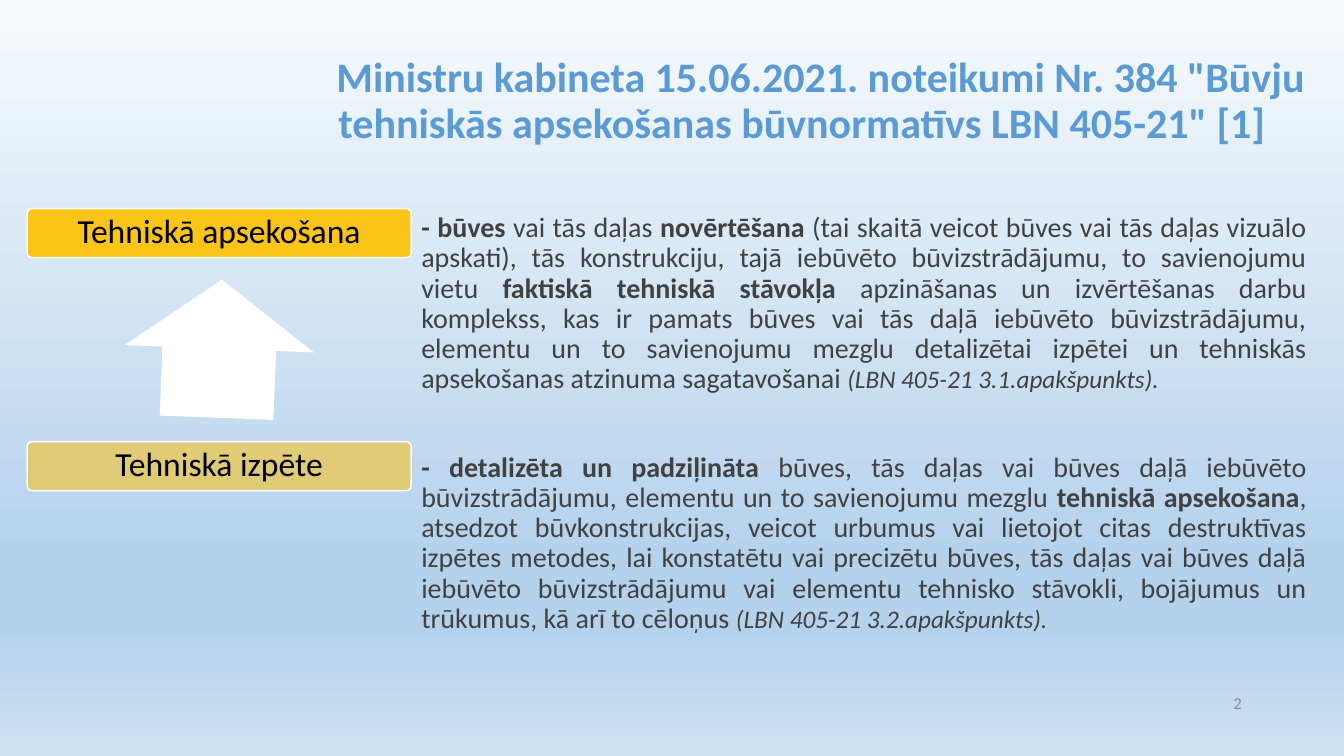
from dataclasses import dataclass

import pptx
import pptx.dml.color
import pptx.enum.shapes
import pptx.enum.text
import pptx.oxml
import pptx.oxml.ns
import pptx.util
from lxml import etree

Pt = pptx.util.Pt
RGB = pptx.dml.color.RGBColor
Align = pptx.enum.text.PP_ALIGN
Anchor = pptx.enum.text.MSO_ANCHOR
Kind = pptx.enum.shapes.MSO_SHAPE
qn = pptx.oxml.ns.qn

BLUE = RGB(0x5B, 0x9B, 0xD5)
DARK = RGB(0x41, 0x41, 0x42)
GREY = RGB(0x8C, 0x8C, 0x8C)
GOLD = RGB(0xFF, 0xC0, 0x00)
BLACK = RGB(0, 0, 0)
WHITE = RGB(0xFF, 0xFF, 0xFF)
SKY = [
    (0, RGB(0xF7, 0xFA, 0xFD)),
    (74, RGB(0xB5, 0xD2, 0xEC)),
    (83, RGB(0xB5, 0xD2, 0xEC)),
    (100, RGB(0xCE, 0xE1, 0xF2)),
]


@dataclass
class Run:
    text: str
    size: float = 20
    color: RGB = DARK
    bold: bool = False
    italic: bool = False


@dataclass
class Label:
    text: str
    top: float
    alpha: int


LABELS = [
    Label("Tehniskā apsekošana", 149, 90),
    Label("Tehniskā izpēte", 315.4, 50),
]

TERMS = [
    [
        Run("- būves", bold=True),
        Run(" vai tās daļas "),
        Run("novērtēšana", bold=True),
        Run(" (tai skaitā veicot būves vai tās daļas vizuālo apskati), tās "
            "konstrukciju, tajā iebūvēto būvizstrādājumu, to savienojumu vietu "),
        Run("faktiskā tehniskā stāvokļa ", bold=True),
        Run("apzināšanas un izvērtēšanas darbu komplekss, kas ir pamats būves "
            "vai tās daļā iebūvēto būvizstrādājumu, elementu un to savienojumu "
            "mezglu detalizētai izpētei un tehniskās apsekošanas atzinuma "
            "sagatavošanai "),
        Run("(LBN 405-21 3.1.apakšpunkts).", 18, italic=True),
    ],
    [
        Run("- detalizēta un padziļināta", bold=True),
        Run(" būves, tās daļas vai būves daļā iebūvēto būvizstrādājumu, "
            "elementu un to savienojumu mezglu "),
        Run("tehniskā apsekošana", bold=True),
        Run(", atsedzot būvkonstrukcijas, veicot urbumus vai lietojot citas "
            "destruktīvas izpētes metodes, lai konstatētu vai precizētu būves, "
            "tās daļas vai būves daļā iebūvēto būvizstrādājumu vai elementu "
            "tehnisko stāvokli, bojājumus un trūkumus, kā arī to cēloņus "),
        Run("(LBN 405-21 3.2.apakšpunkts).", 18, italic=True),
    ],
]


def set_frame(frame, anchor: Anchor) -> None:
    frame.word_wrap = True
    frame.auto_size = pptx.enum.text.MSO_AUTO_SIZE.NONE
    frame.vertical_anchor = anchor


def write(para, runs: list[Run], align: Align) -> None:
    para.alignment = align
    para.line_spacing = 0.9
    for item in runs:
        run = para.add_run()
        run.text = item.text
        font = run.font
        font.name = "Calibri"
        font.size = Pt(item.size)
        font.bold = item.bold
        font.italic = item.italic
        font.color.rgb = item.color


def paint_sky(slide) -> None:
    fill = slide.background.fill
    fill.gradient()
    fill.gradient_angle = 270
    stops = next(slide.element.iter(qn("a:gsLst")))
    for old in list(stops):
        stops.remove(old)
    for place, color in SKY:
        stop = etree.SubElement(stops, qn("a:gs"), pos=str(place * 1000))
        etree.SubElement(stop, qn("a:srgbClr"), val=str(color))


def add_title(slide) -> None:
    title = slide.shapes.title
    title.left, title.top = Pt(185.8), Pt(15.1)
    title.width, title.height = Pt(774.5), Pt(115.2)
    set_frame(title.text_frame, Anchor.MIDDLE)
    para = title.text_frame.paragraphs[0]
    text = ('Ministru kabineta 15.06.2021. noteikumi Nr. 384 "Būvju '
            'tehniskās apsekošanas būvnormatīvs LBN 405-21" [1]')
    para._p.get_or_add_pPr().set("indent", str(Pt(27)))
    write(para, [Run(text, 30, BLUE, True)], Align.CENTER)


def add_text(slide, box: tuple, paras: list[list[Run]], align: Align,
             anchor: Anchor, gap: float = 0) -> None:
    frame = slide.shapes.add_textbox(*map(Pt, box)).text_frame
    set_frame(frame, anchor)
    for i, runs in enumerate(paras):
        para = frame.add_paragraph() if i else frame.paragraphs[0]
        if i:
            para.space_before = Pt(gap)
        write(para, runs, align)


def add_shape(slide, kind: Kind, box: tuple, color: RGB):
    shape = slide.shapes.add_shape(kind, *map(Pt, box))
    shape.shadow.inherit = False
    shape.fill.solid()
    shape.fill.fore_color.rgb = color
    return shape


def add_label(slide, label: Label) -> None:
    box = (19.4, label.top, 274.3, 35)
    shape = add_shape(slide, Kind.ROUNDED_RECTANGLE, box, GOLD)
    shape.adjustments[0] = 0.1
    color = shape.fill._xPr.find(qn("a:solidFill"))[0]
    etree.SubElement(color, qn("a:alpha"), val=str(label.alpha * 1000))
    shape.line.color.rgb = WHITE
    shape.line.width = Pt(1)
    set_frame(shape.text_frame, Anchor.MIDDLE)
    write(shape.text_frame.paragraphs[0], [Run(label.text, 24, BLACK)],
          Align.CENTER)


def add_arrow(slide) -> None:
    box = (107.3, 181.4, 98.6, 135.4)
    arrow = add_shape(slide, Kind.RIGHT_ARROW, box, WHITE)
    arrow.adjustments[0] = 0.6
    arrow.adjustments[1] = 0.5
    arrow.rotation = 272.2
    arrow.line.fill.background()


def main() -> None:
    deck = pptx.Presentation()
    deck.slide_width, deck.slide_height = Pt(960), Pt(540)
    slide = deck.slides.add_slide(deck.slide_layouts.get_by_name("Title Only"))
    paint_sky(slide)
    add_title(slide)
    add_text(slide, (293.8, 149, 646.6, 367.2), TERMS, Align.JUSTIFY,
             Anchor.TOP, 41.5)
    add_text(slide, (678.2, 488.2, 216, 28.8), [[Run("2", 12, GREY)]],
             Align.RIGHT, Anchor.MIDDLE)
    for label in LABELS:
        add_label(slide, label)
    add_arrow(slide)
    deck.save("out.pptx")


if __name__ == "__main__":
    main()
